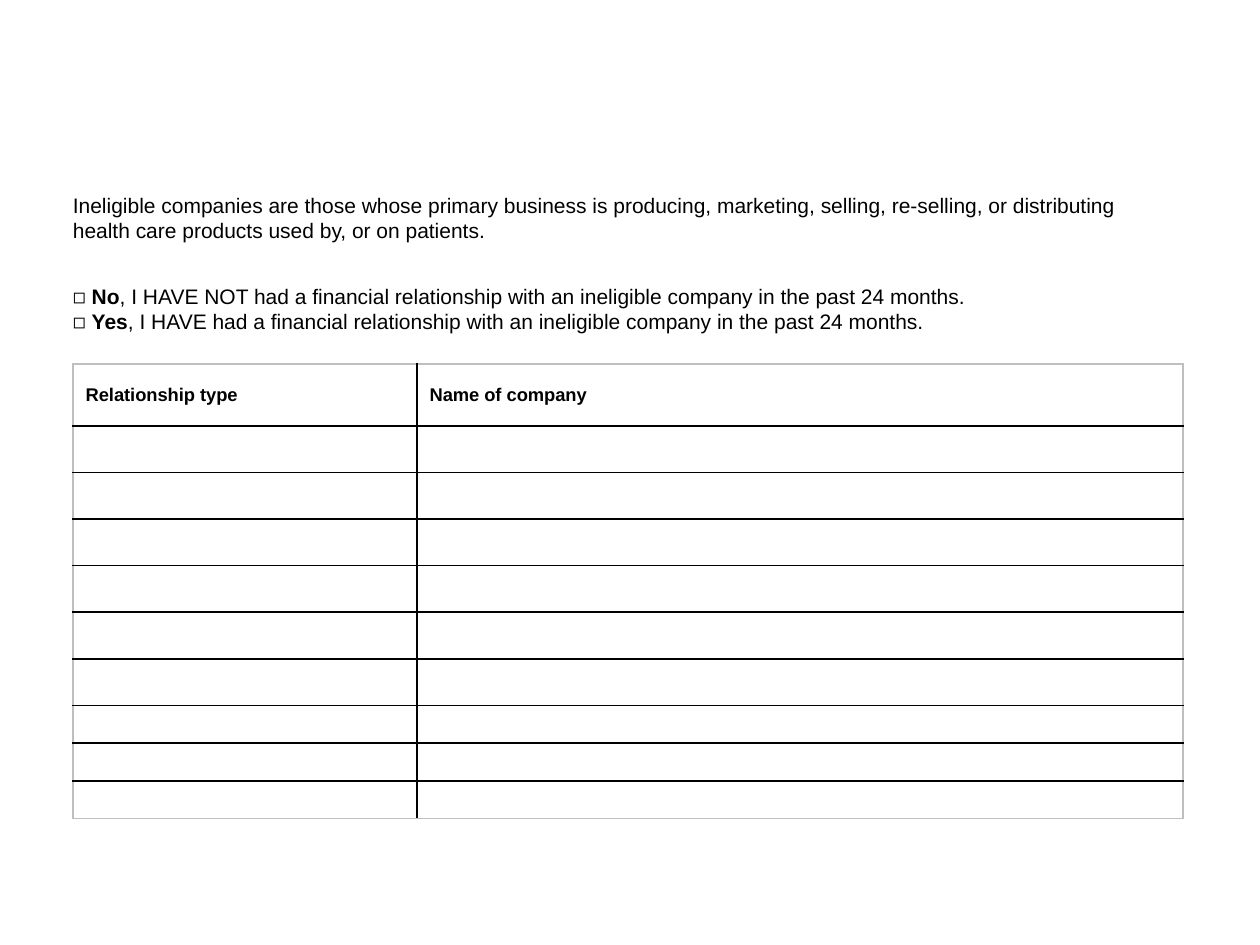
from copy import deepcopy
from typing import NamedTuple

from lxml.etree import SubElement
from pptx import Presentation
from pptx.dml.color import RGBColor
from pptx.enum.text import MSO_ANCHOR, MSO_AUTO_SIZE
from pptx.oxml.ns import qn
from pptx.util import Inches, Pt

BLACK = RGBColor(0x00, 0x00, 0x00)
WHITE = RGBColor(0xFF, 0xFF, 0xFF)
GREY = RGBColor(0xBF, 0xBF, 0xBF)

FONT = "Arial"
BODY_SIZE = 12
TABLE_SIZE = 10.5
BORDER_WIDTH = 1

HEADERS = ["Relationship type", "Name of company"]
COLUMN_WIDTHS = [2.73, 6.08]
ROW_HEIGHTS = [0.49] + [0.37] * 6 + [0.3] * 3


class Piece(NamedTuple):
    text: str
    bold: bool = False


class TextBlock(NamedTuple):
    left: float
    top: float
    width: float
    height: float
    paragraphs: list[list[Piece]]


def answer(word: str, statement: str) -> list[Piece]:
    """A checkbox line with its answer word in bold."""
    return [Piece("◻︎ "), Piece(word, True),
            Piece(f", I {statement} had a financial relationship with an "
                  "ineligible company in the past 24 months.")]


TEXT_BLOCKS = [
    TextBlock(0.48, 1.48, 9.92, 0.5, [[Piece(
        "Ineligible companies are those whose primary business is producing, "
        "marketing, selling, re-selling, or distributing\n"
        "health care products used by, or on patients.")]]),
    TextBlock(0.48, 2.2, 10.92, 0.5, [
        answer("No", "HAVE NOT"),
        answer("Yes", "HAVE"),
    ]),
]


def add_piece(paragraph, piece: Piece, size: float) -> None:
    for number, line in enumerate(piece.text.split("\n")):
        if number:
            # The break takes the format of the line before it
            properties = deepcopy(paragraph.runs[-1].font._element)
            paragraph.add_line_break()
            paragraph._p.findall(qn("a:br"))[-1].append(properties)
        run = paragraph.add_run()
        run.text = line
        settings = {"name": FONT, "size": Pt(size), "bold": piece.bold}
        for name, value in settings.items():
            setattr(run.font, name, value)
        run.font.color.rgb = BLACK


def add_text_block(slide, block: TextBlock) -> None:
    box = slide.shapes.add_textbox(*(Inches(length) for length in block[:4]))
    frame = box.text_frame
    frame.word_wrap = True
    frame.auto_size = MSO_AUTO_SIZE.SHAPE_TO_FIT_TEXT
    for number, pieces in enumerate(block.paragraphs):
        paragraph = frame.add_paragraph() if number else frame.paragraphs[0]
        for piece in pieces:
            add_piece(paragraph, piece, BODY_SIZE)


def set_borders(cell, colors: dict[str, RGBColor]) -> None:
    properties = cell._tc.get_or_add_tcPr()
    for position, (side, color) in enumerate(colors.items()):
        line = properties.makeelement(
            qn(f"a:{side}"), {"w": str(Pt(BORDER_WIDTH))})
        fill = SubElement(line, qn("a:solidFill"))
        SubElement(fill, qn("a:srgbClr"), val=str(color))
        properties.insert(position, line)


def add_company_table(slide) -> None:
    row_count, column_count = len(ROW_HEIGHTS), len(COLUMN_WIDTHS)
    table = slide.shapes.add_table(
        row_count, column_count, Inches(0.58), Inches(2.89),
        Inches(sum(COLUMN_WIDTHS)), Inches(sum(ROW_HEIGHTS))).table
    for column, width in zip(table.columns, COLUMN_WIDTHS):
        column.width = Inches(width)
    for row, height in zip(table.rows, ROW_HEIGHTS):
        row.height = Inches(height)

    for row in range(row_count):
        for column in range(column_count):
            cell = table.cell(row, column)
            cell.fill.solid()
            cell.fill.fore_color.rgb = WHITE
            cell.vertical_anchor = MSO_ANCHOR.MIDDLE
            paragraph = cell.text_frame.paragraphs[0]
            if row == 0:
                add_piece(paragraph, Piece(HEADERS[column], True), TABLE_SIZE)
            else:
                # Small empty text keeps the low rows at their height
                SubElement(paragraph._p, qn("a:endParaRPr"),
                           sz=str(int(TABLE_SIZE * 100)))
            # Grey outer frame, black inner lines
            set_borders(cell, {
                "lnL": GREY if column == 0 else BLACK,
                "lnR": GREY if column == column_count - 1 else BLACK,
                "lnT": GREY if row == 0 else BLACK,
                "lnB": GREY if row == row_count - 1 else BLACK,
            })


def main() -> None:
    presentation = Presentation()
    presentation.slide_width = Inches(10)
    presentation.slide_height = Inches(7.5)
    # Blank layout: the slide has no title
    slide = presentation.slides.add_slide(presentation.slide_layouts[6])

    # Definition and answers
    for block in TEXT_BLOCKS:
        add_text_block(slide, block)

    # Table to fill in
    add_company_table(slide)
    presentation.save("out.pptx")


if __name__ == "__main__":
    main()
